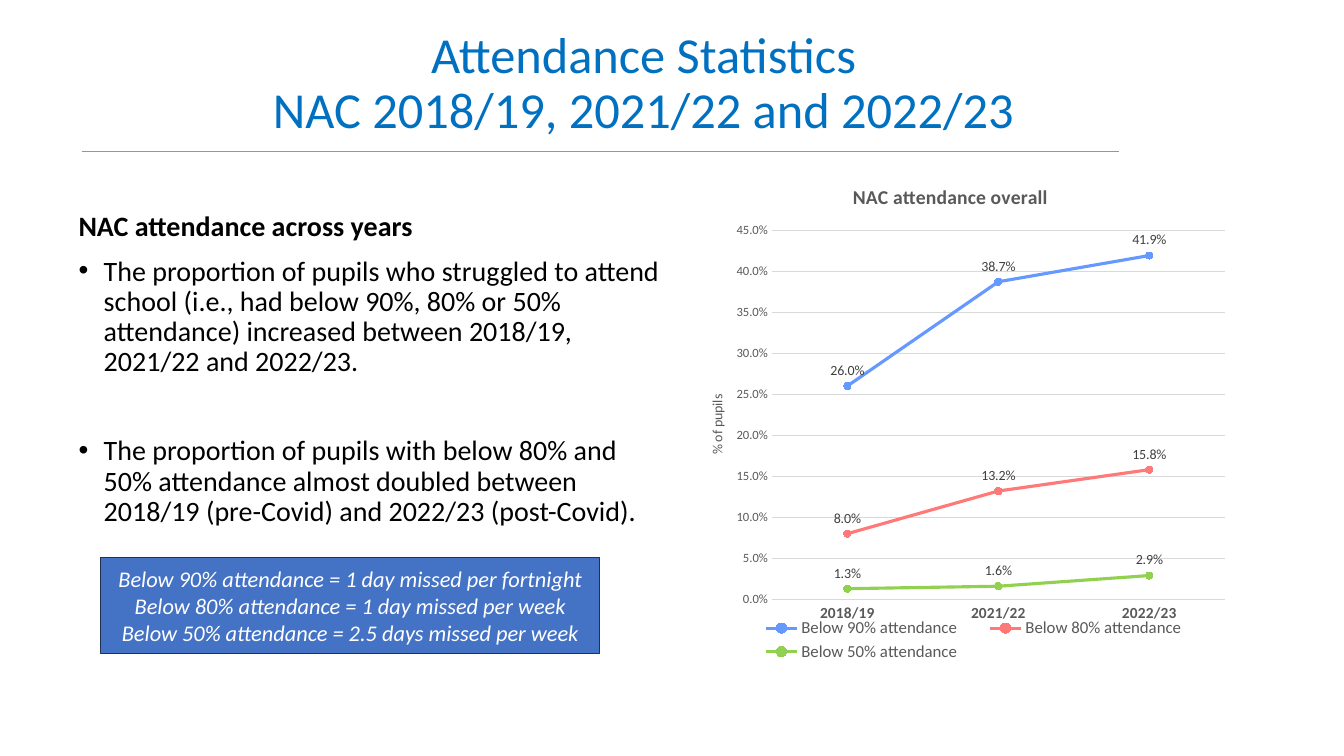
from lxml import etree
from pptx import Presentation
from pptx.chart.data import CategoryChartData
from pptx.dml.color import RGBColor
from pptx.enum.chart import (XL_CHART_TYPE, XL_LABEL_POSITION, XL_LEGEND_POSITION,
                             XL_MARKER_STYLE, XL_TICK_MARK)
from pptx.enum.shapes import MSO_CONNECTOR, MSO_SHAPE
from pptx.enum.text import MSO_ANCHOR, PP_ALIGN
from pptx.oxml import parse_xml
from pptx.oxml.ns import nsdecls, qn
from pptx.util import Pt

CENTER = PP_ALIGN.CENTER
MIDDLE = MSO_ANCHOR.MIDDLE
NO_TICK = XL_TICK_MARK.NONE
CIRCLE = XL_MARKER_STYLE.CIRCLE
ABOVE = XL_LABEL_POSITION.ABOVE

BLACK = RGBColor(0x00, 0x00, 0x00)
WHITE = RGBColor(0xFF, 0xFF, 0xFF)
TITLE_BLUE = RGBColor(0x00, 0x70, 0xC0)
ORANGE = RGBColor(0xED, 0x7D, 0x31)
BOX_BLUE = RGBColor(0x44, 0x72, 0xC4)
BOX_EDGE = RGBColor(0x1E, 0x32, 0x56)
AXIS_GREY = RGBColor(0x59, 0x59, 0x59)
LABEL_GREY = RGBColor(0x40, 0x40, 0x40)
GRID_GREY = RGBColor(0xD9, 0xD9, 0xD9)
LINE_BLUE = RGBColor(0x66, 0x99, 0xFF)
LINE_RED = RGBColor(0xFF, 0x79, 0x79)
LINE_GREEN = RGBColor(0x92, 0xD0, 0x50)


def style_font(font, size, color, bold=False, italic=False):
    font.name = "Calibri"
    font.size = Pt(size)
    font.color.rgb = color
    font.bold = bold
    font.italic = italic


def place_chart_part(element, previous_tag, **fractions):
    for old in element.findall(qn("c:layout")):
        element.remove(old)
    layout = parse_xml(f"<c:layout {nsdecls('c')}><c:manualLayout/></c:layout>")
    manual = layout[0]
    if previous_tag == "c:legendPos":
        modes = {"xMode": "edge", "yMode": "edge"}
    elif previous_tag is None:
        modes = {"layoutTarget": "inner", "xMode": "edge", "yMode": "edge"}
    else:
        modes = {"xMode": "edge", "yMode": "edge"}
    for tag, value in {**modes, **fractions}.items():
        etree.SubElement(manual, qn("c:" + tag)).set("val", str(value))
    if previous_tag is None:
        element.insert(0, layout)
    else:
        element.find(qn(previous_tag)).addnext(layout)


deck = Presentation()
deck.slide_width = Pt(960)
deck.slide_height = Pt(540)
page = deck.slides.add_slide(deck.slide_layouts[6])

body_box = page.shapes.add_textbox(Pt(49), Pt(148.3), Pt(431.3), Pt(242.6))
body = body_box.text_frame
body.word_wrap = True
BODY_PARAGRAPHS = [
    ("NAC attendance across years", False, 10),
    ("The proportion of pupils who struggled to attend school (i.e., had below 90%, "
     "80% or 50% attendance) increased between 2018/19, 2021/22 and 2022/23.", True, 10),
    ("The proportion of pupils with below 80% and 50% attendance almost doubled "
     "between 2018/19 (pre-Covid) and 2022/23 (post-Covid).", True, 42),
]
for index, (text, bulleted, space) in enumerate(BODY_PARAGRAPHS):
    para = body.add_paragraph() if index else body.paragraphs[0]
    para.line_spacing = 0.9
    para.space_before = Pt(space)
    span = para.add_run()
    span.text = text
    style_font(span.font, 20, BLACK, bold=not bulleted)
    if bulleted:
        properties = para._p.get_or_add_pPr()
        properties.set("marL", str(Pt(18)))
        properties.set("indent", str(-Pt(18)))
        etree.SubElement(properties, qn("a:buFont")).set("typeface", "Arial")
        etree.SubElement(properties, qn("a:buChar")).set("char", "•")

title_box = page.shapes.add_textbox(Pt(24.5), Pt(18), Pt(870.5), Pt(90))
title_box.text_frame.word_wrap = True
for index, text in enumerate(["Attendance Statistics", "NAC 2018/19, 2021/22 and 2022/23"]):
    frame = title_box.text_frame
    para = frame.add_paragraph() if index else frame.paragraphs[0]
    para.alignment = CENTER
    para.line_spacing = 0.9
    span = para.add_run()
    span.text = text
    style_font(span.font, 36, TITLE_BLUE)

rule = page.shapes.add_connector(MSO_CONNECTOR.STRAIGHT, Pt(58.3), Pt(108), Pt(799.2), Pt(108))
rule.line.color.rgb = ORANGE
rule.line.width = Pt(0.5)
etree.SubElement(rule._element.spPr, qn("a:effectLst"))

SERIES = [
    ("Below 90% attendance", (0.26, 0.387, 0.419), LINE_BLUE),
    ("Below 80% attendance", (0.08, 0.132, 0.158), LINE_RED),
    ("Below 50% attendance", (0.013, 0.016, 0.029), LINE_GREEN),
]
chart_data = CategoryChartData(number_format="0.0%")
chart_data.categories = ["2018/19", "2021/22", "2022/23"]
for name, values, color in SERIES:
    chart_data.add_series(name, values)
chart = page.shapes.add_chart(XL_CHART_TYPE.LINE_MARKERS, Pt(488.2), Pt(117.4),
                              Pt(394.6), Pt(361.4), chart_data).chart
style_font(chart.font, 10, BLACK)

span = chart.chart_title.text_frame.paragraphs[0].add_run()
span.text = "NAC attendance overall"
style_font(span.font, 14, AXIS_GREY, bold=True)
chart.chart_title.include_in_layout = False
place_chart_part(chart.chart_title._element, "c:tx", x=0.3, y=0.03)

chart.has_legend = True
chart.legend.position = XL_LEGEND_POSITION.BOTTOM
chart.legend.include_in_layout = False
style_font(chart.legend.font, 12, AXIS_GREY)
place_chart_part(chart.legend._element, "c:legendPos", x=0.1, y=0.89, w=0.85, h=0.1)
place_chart_part(chart._chartSpace.chart.plotArea, None, x=0.16, y=0.13, w=0.82, h=0.73)

years = chart.category_axis
years.major_tick_mark = NO_TICK
years.minor_tick_mark = NO_TICK
years.format.line.color.rgb = GRID_GREY
years.format.line.width = Pt(0.75)
style_font(years.tick_labels.font, 11, AXIS_GREY, bold=True)

shares = chart.value_axis
shares.minimum_scale = 0
shares.maximum_scale = 0.45
shares.major_unit = 0.05
shares.major_tick_mark = NO_TICK
shares.minor_tick_mark = NO_TICK
shares.format.line.fill.background()
shares.major_gridlines.format.line.color.rgb = GRID_GREY
shares.major_gridlines.format.line.width = Pt(0.75)
shares.tick_labels.number_format = "0.0%"
shares.tick_labels.number_format_is_linked = False
style_font(shares.tick_labels.font, 9, AXIS_GREY)
axis_frame = shares.axis_title.text_frame
span = axis_frame.paragraphs[0].add_run()
span.text = "% of pupils"
style_font(span.font, 10, AXIS_GREY)
axis_frame._txBody.bodyPr.set("rot", "-5400000")
axis_frame._txBody.bodyPr.set("vert", "horz")
place_chart_part(shares.axis_title._element, "c:tx", x=0.04, y=0.45)

plot = chart.plots[0]
plot.vary_by_categories = False
for series, (name, values, color) in zip(plot.series, SERIES):
    series.smooth = False
    series.format.line.color.rgb = color
    series.format.line.width = Pt(2.25)
    series.marker.style = CIRCLE
    series.marker.size = 5
    series.marker.format.fill.solid()
    series.marker.format.fill.fore_color.rgb = color
    series.marker.format.line.color.rgb = color
    labels = series.data_labels
    labels.show_value = True
    labels.position = ABOVE
    labels.number_format = "0.0%"
    labels.number_format_is_linked = False
    style_font(labels.font, 10, LABEL_GREY)

key_box = page.shapes.add_shape(MSO_SHAPE.RECTANGLE, Pt(72), Pt(398.2), Pt(356.4), Pt(68.4))
key_box.shadow.inherit = False
key_box.fill.solid()
key_box.fill.fore_color.rgb = BOX_BLUE
key_box.line.color.rgb = BOX_EDGE
key_box.line.width = Pt(1)
key_box.text_frame.word_wrap = True
key_box.text_frame.vertical_anchor = MIDDLE
for index, (level, missed) in enumerate([("90%", "1 day missed per fortnight"),
                                         ("80%", "1 day missed per week"),
                                         ("50%", "2.5 days missed per week")]):
    frame = key_box.text_frame
    para = frame.add_paragraph() if index else frame.paragraphs[0]
    para.alignment = CENTER
    span = para.add_run()
    span.text = f"Below {level} attendance = {missed}"
    style_font(span.font, 16, WHITE, italic=True)

deck.save("out.pptx")
